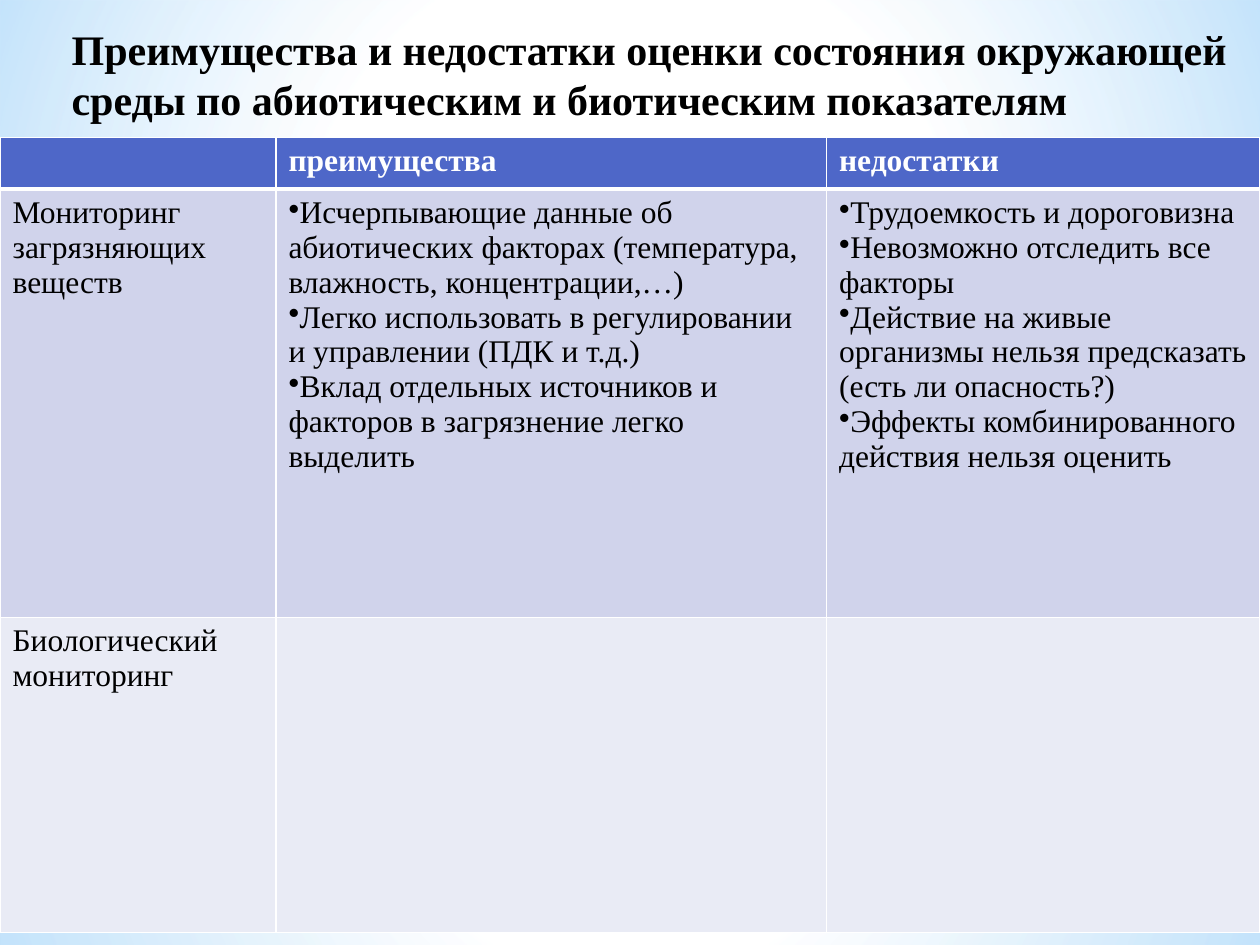
from lxml.etree import SubElement
from pptx import Presentation
from pptx.dml.color import RGBColor
from pptx.enum.shapes import MSO_SHAPE as Shape
from pptx.enum.text import MSO_ANCHOR as Anchor
from pptx.oxml import parse_xml
from pptx.oxml.ns import nsdecls, qn
from pptx.util import Inches, Pt

SKY = "B4DCFA"
WHITE = "FFFFFF"
BLACK = "000000"

HEADER = ["", "преимущества", "недостатки"]
POLLUTANTS = [
    "Мониторинг загрязняющих веществ",
    [
        "Исчерпывающие данные об абиотических факторах (температура, влажность, концентрации,…)",
        "Легко использовать в регулировании и управлении (ПДК и т.д.)",
        "Вклад отдельных источников и факторов в загрязнение легко выделить",
    ],
    [
        "Трудоемкость и дороговизна",
        "Невозможно отследить все факторы",
        "Действие на живые организмы нельзя предсказать (есть ли опасность?)",
        "Эффекты комбинированного действия нельзя оценить",
    ],
]
BIOLOGICAL = ["Биологический мониторинг", "", ""]


def rgb(value):
    return RGBColor.from_string(value)


class SlideStyle:
    font = "Times New Roman"
    title_size = 24
    body_size = 18

    def __init__(self, slide):
        self.slide = slide

    def glow(self, kind, box, stops, angle=None):
        shape = self.slide.shapes.add_shape(kind, *map(Inches, box))
        shape.shadow.inherit = False
        shape.line.fill.background()
        shape.fill.gradient()
        gradient = shape._element.spPr.find(qn("a:gradFill"))
        for child in list(gradient):
            gradient.remove(child)
        stop_list = SubElement(gradient, qn("a:gsLst"))
        for position, color, opacity in stops:
            stop = SubElement(stop_list, qn("a:gs"), pos=str(position * 1000))
            tint = SubElement(stop, qn("a:srgbClr"), val=color)
            SubElement(tint, qn("a:alpha"), val=str(opacity * 1000))
        if angle is None:
            radial = SubElement(gradient, qn("a:path"), path="circle")
            center = dict.fromkeys("ltrb", "50000")
            SubElement(radial, qn("a:fillToRect"), **center)
        else:
            SubElement(gradient, qn("a:lin"), ang=str(angle * 60000), scaled="0")

    def run(self, paragraph, text, size, color, bold):
        run = paragraph.add_run()
        run.text = text
        run.font.name = self.font
        run.font.size = Pt(size)
        run.font.bold = bold
        run.font.color.rgb = rgb(color)

    def title(self, box, text):
        frame = self.slide.shapes.add_textbox(*map(Inches, box)).text_frame
        frame.word_wrap = True
        frame.vertical_anchor = Anchor.MIDDLE
        self.run(frame.paragraphs[0], text, self.title_size, BLACK, True)

    def borders(self, cell, widths):
        properties = cell._tc.get_or_add_tcPr()
        for index, (side, width) in enumerate(widths.items()):
            properties.insert(index, parse_xml(
                f'<a:ln{side} {nsdecls("a")} w="{Pt(width)}"><a:solidFill>'
                f'<a:srgbClr val="{WHITE}"/></a:solidFill></a:ln{side}>'))

    def cell(self, cell, content, fill, color, bold, widths):
        cell.fill.solid()
        cell.fill.fore_color.rgb = rgb(fill)
        self.borders(cell, widths)
        bulleted = isinstance(content, list)
        frame = cell.text_frame
        for index, text in enumerate(content if bulleted else [content]):
            paragraph = frame.add_paragraph() if index else frame.paragraphs[0]
            if bulleted:
                SubElement(paragraph._p.get_or_add_pPr(), qn("a:buChar"), char="•")
            if text:
                self.run(paragraph, text, self.body_size, color, bold)

    def table(self, box, widths, heights, rows, fills):
        frame = self.slide.shapes.add_table(len(rows), len(widths), *map(Inches, box))
        table = frame.table
        table.horz_banding = False
        for column, width in zip(table.columns, widths):
            column.width = Inches(width)
        for index, (row, height) in enumerate(zip(table.rows, heights)):
            row.height = Inches(height)
            header = index == 0
            edges = {"L": 1, "R": 1, "T": 3 if index == 1 else 1, "B": 3 if header else 1}
            for cell, content in zip(row.cells, rows[index]):
                self.cell(cell, content, fills[index], WHITE if header else BLACK, header, edges)


def main():
    deck = Presentation()
    deck.slide_width, deck.slide_height = Inches(10), Inches(7.5)
    slide = deck.slides.add_slide(deck.slide_layouts[6])
    slide.background.fill.solid()
    slide.background.fill.fore_color.rgb = rgb(WHITE)
    style = SlideStyle(slide)

    style.glow(Shape.RECTANGLE, (0, 4.23, 10, 3.27),
               [(0, WHITE, 91), (37, WHITE, 76), (100, SKY, 79)])
    style.glow(Shape.RECTANGLE, (0, 0, 10, 4.23),
               [(0, WHITE, 89), (48, WHITE, 62), (100, SKY, 79)])
    style.glow(Shape.RECTANGLE, (0, 2.9, 10, 2.5),
               [(0, WHITE, 0), (29, WHITE, 30), (45, SKY, 40),
                (55, WHITE, 26), (65, SKY, 60), (100, WHITE, 0)], angle=90)
    style.glow(Shape.OVAL, (0, 1.75, 10, 5.58), [(0, WHITE, 100), (54, WHITE, 0)])

    style.title((0.47, 0, 9.38, 1.17),
                "Преимущества и недостатки оценки состояния окружающей среды "
                "по абиотическим и биотическим показателям")
    style.table((0, 1.09, 10, 6.31), [2.19, 4.37, 3.44], [0.41, 3.4, 2.5],
                [HEADER, POLLUTANTS, BIOLOGICAL], ["4E67C8", "D0D3EB", "E9EBF5"])
    deck.save("out.pptx")


if __name__ == "__main__":
    main()
